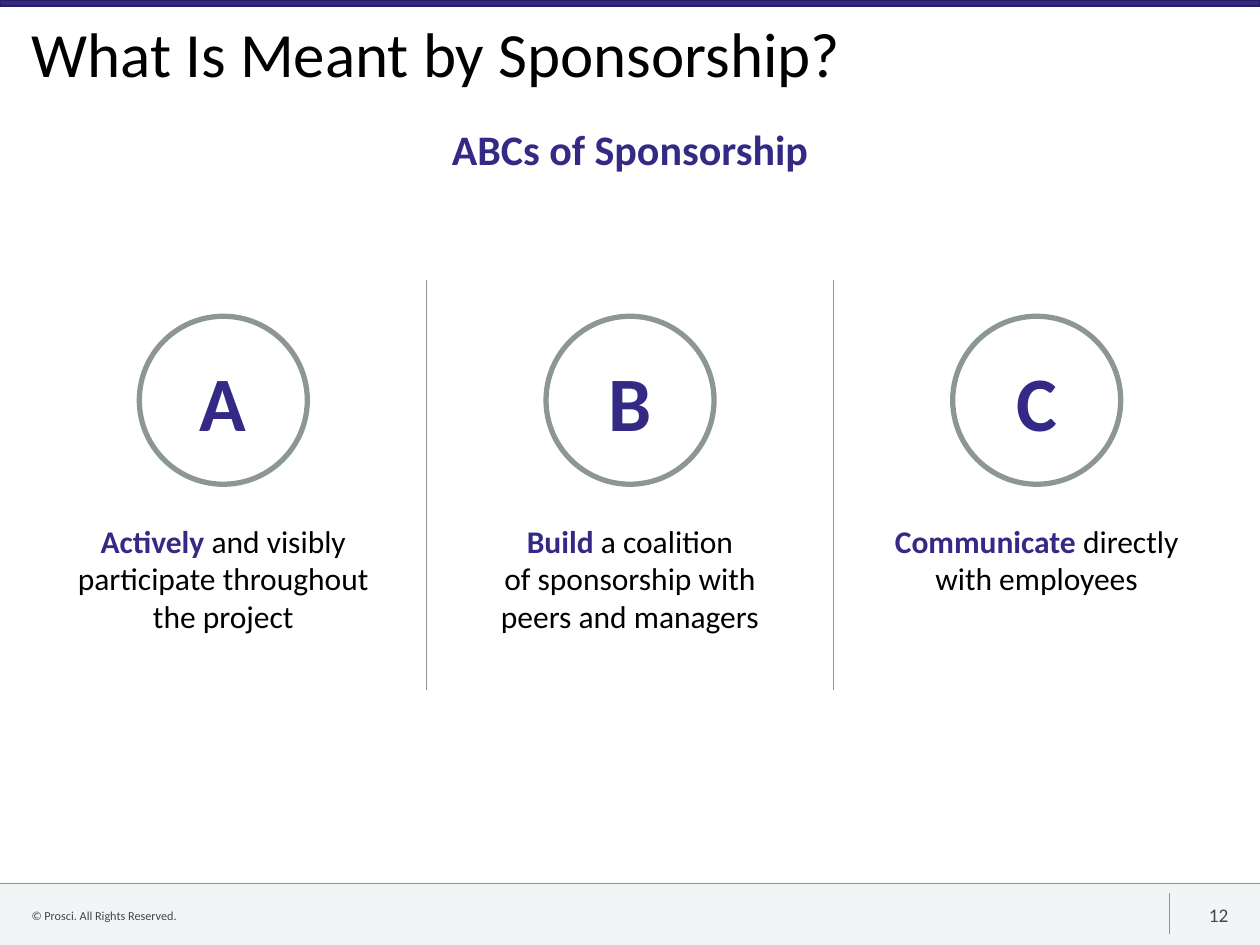
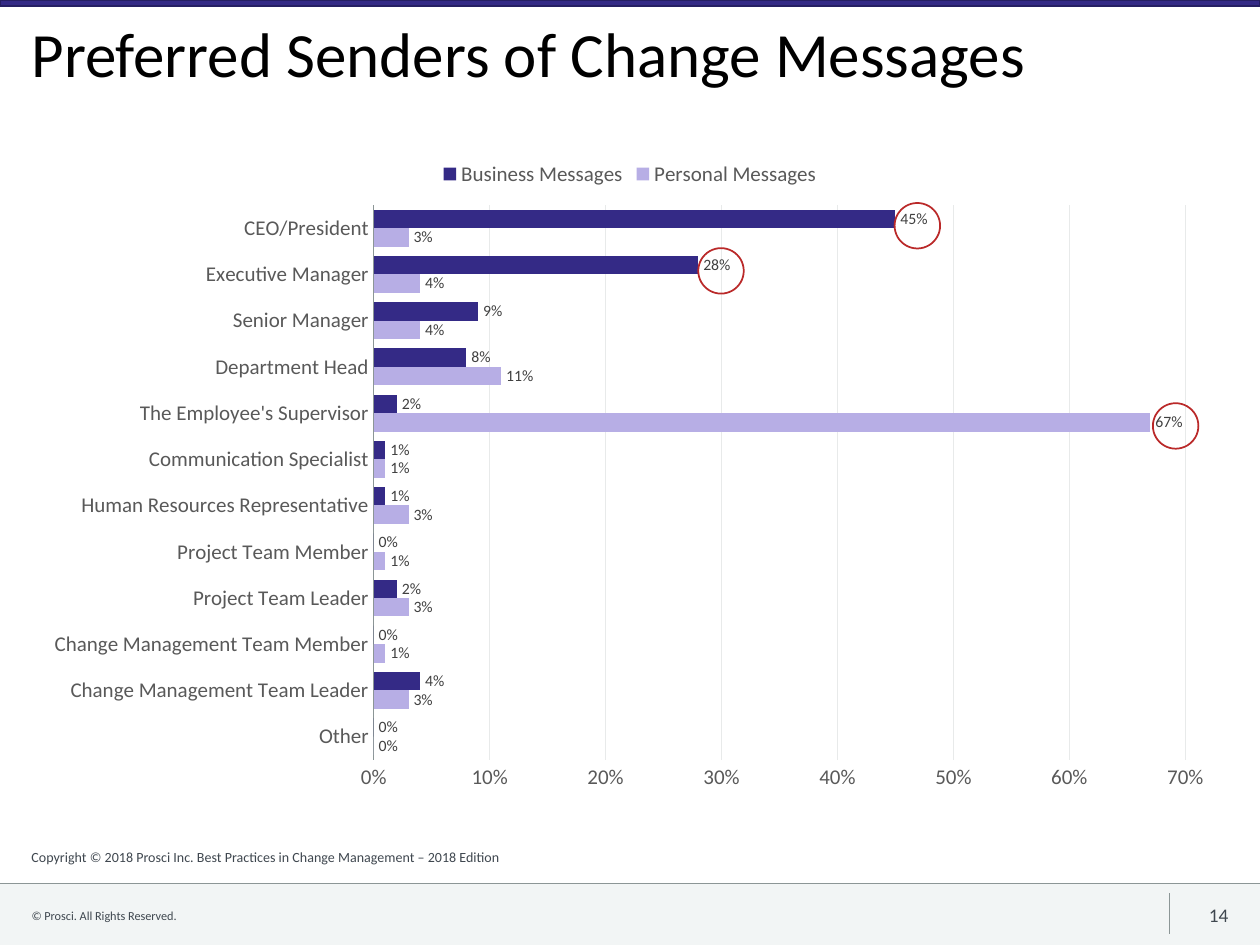
from lxml import etree
from pptx import Presentation
from pptx.chart.data import CategoryChartData
from pptx.dml.color import RGBColor
from pptx.enum.chart import XL_CHART_TYPE as CT, XL_LABEL_POSITION as LP
from pptx.enum.chart import XL_LEGEND_POSITION as LEG, XL_TICK_MARK as TICK
from pptx.enum.shapes import MSO_CONNECTOR as CONN, MSO_SHAPE as SHAPE
from pptx.enum.text import MSO_ANCHOR as ANCHOR, MSO_AUTO_SIZE as AUTO, PP_ALIGN as AL
from pptx.oxml import parse_xml
from pptx.oxml.ns import nsdecls, qn
from pptx.util import Pt

# Content
FOOTER = "© Prosci. All Rights Reserved."
ABC_TITLE = "What Is Meant by Sponsorship?"
ABC_HEADING = "ABCs of Sponsorship"
ABCS = [  # letter, bold lead, rest of the text by line
    ("A", "Actively", [" and visibly", "participate throughout", "the project"]),
    ("B", "Build ", ["a coalition", "of sponsorship with", "peers and managers"]),
    ("C", "Communicate", [" directly", "with employees"]),
]
SENDERS_TITLE = "Preferred Senders of Change Messages"
SOURCE = "Copyright © 2018 Prosci Inc. Best Practices in Change Management – 2018 Edition"
SENDERS = [  # sender, personal messages, business messages; bottom bar first
    ("Other", 0, 0),
    ("Change Management Team Leader", 0.03, 0.04),
    ("Change Management Team Member", 0.01, 0),
    ("Project Team Leader", 0.03, 0.02),
    ("Project Team Member", 0.01, 0),
    ("Human Resources Representative", 0.03, 0.01),
    ("Communication Specialist", 0.01, 0.01),
    ("The Employee's Supervisor", 0.67, 0.02),
    ("Department Head", 0.11, 0.08),
    ("Senior Manager", 0.04, 0.09),
    ("Executive Manager", 0.04, 0.28),
    ("CEO/President", 0.03, 0.45),
]
HIGHLIGHTS = [(511.2, 116), (658.8, 230.4), (399, 141.8)]

# Style
FONT = "Calibri"
INDIGO = RGBColor(0x34, 0x2A, 0x86)
INDIGO_DARK = RGBColor(0x26, 0x1F, 0x63)
LILAC = RGBColor(0xB7, 0xAE, 0xE5)
GRAY = RGBColor(0x8C, 0x96, 0x96)
GRID = RGBColor(0xE8, 0xEA, 0xEA)
PALE = RGBColor(0xF2, 0xF5, 0xF5)
SLATE = RGBColor(0x3F, 0x47, 0x4F)
AXIS_TEXT = RGBColor(0x59, 0x59, 0x59)
LABEL_TEXT = RGBColor(0x40, 0x40, 0x40)
RED = RGBColor(0xBA, 0x29, 0x29)
BLACK = RGBColor(0, 0, 0)
W, H, MARGIN = 720, 540, 18
BODY_W = W - 2 * MARGIN


def set_font(font, size, color, bold=False):
    font.name, font.size, font.bold = FONT, Pt(size), bold
    font.color.rgb = color


def set_frame(tf, insets, anchor=ANCHOR.TOP, wrap=True):
    tf.word_wrap, tf.auto_size, tf.vertical_anchor = wrap, AUTO.NONE, anchor
    tf.margin_left, tf.margin_top, tf.margin_right, tf.margin_bottom = map(Pt, insets)


def add_text(s, box, text, size, color, insets=(0, 0, 0, 0), anchor=ANCHOR.TOP,
             align=AL.LEFT, bold=False, wrap=True):
    tf = s.shapes.add_textbox(*map(Pt, box)).text_frame
    set_frame(tf, insets, anchor, wrap)
    p = tf.paragraphs[0]
    p.alignment = align
    r = p.add_run()
    r.text = text
    set_font(r.font, size, color, bold)
    return p


def add_shape(s, kind, box, fill=None, line=None, width=1):
    sp = s.shapes.add_shape(kind, *map(Pt, box))
    sp.shadow.inherit = False
    if fill is None:
        sp.fill.background()
    else:
        sp.fill.solid()
        sp.fill.fore_color.rgb = fill
    if line is None:
        sp.line.fill.background()
    else:
        sp.line.color.rgb, sp.line.width = line, Pt(width)
    return sp


def add_rule(s, x1, y1, x2, y2):
    cx = s.shapes.add_connector(CONN.STRAIGHT, Pt(x1), Pt(y1), Pt(x2), Pt(y2))
    cx.line.color.rgb, cx.line.width = GRAY, Pt(0.5)
    etree.SubElement(cx._element.spPr, qn("a:effectLst"))


def add_slide(prs, title, number):
    """Title, top band and footer shared by all slides."""
    s = prs.slides.add_slide(prs.slide_layouts[5])
    footer_y = 504.7
    add_shape(s, SHAPE.RECTANGLE, (0, footer_y, W, H - footer_y), PALE)
    add_shape(s, SHAPE.RECTANGLE, (0, 0, W, 3.6), INDIGO, INDIGO_DARK)
    add_rule(s, 0, footer_y, W, footer_y)
    add_rule(s, 668, 510.5, 668, 534)
    add_text(s, (MARGIN, 515, 528, 16), FOOTER, 7, SLATE, (0, 3.6, 7.2, 3.6), ANCHOR.MIDDLE)
    add_text(s, (667, 515.5, 35, 15), str(number), 11, SLATE,
             anchor=ANCHOR.MIDDLE, align=AL.RIGHT)

    t = s.shapes.title
    t.left, t.top, t.width, t.height = map(Pt, (MARGIN, 9.4, BODY_W, 65))
    set_frame(t.text_frame, (0, 3.6, 0, 3.6))
    t.text_frame.text = title
    p = t.text_frame.paragraphs[0]
    p.alignment, p.line_spacing = AL.LEFT, 0.9
    set_font(p.runs[0].font, 36, BLACK)
    return s


def build_abcs(prs):
    s = add_slide(prs, ABC_TITLE, 12)
    add_text(s, (MARGIN, 70.5, BODY_W, 29), ABC_HEADING, 24, INDIGO, (7.2, 0, 7.2, 0),
             align=AL.CENTER, bold=True)

    pitch, col_w, ring = 232.4, 218.6, 96
    for i, (letter, lead, lines) in enumerate(ABCS):
        mid = W / 2 + (i - 1) * pitch
        if i:
            add_rule(s, mid - pitch / 2, 394.5, mid - pitch / 2, 160)

        # Letter in a ring
        sp = add_shape(s, SHAPE.OVAL, (mid - ring / 2, 180.7, ring, ring), line=GRAY, width=3)
        sp.text_frame.text = letter
        sp.text_frame.vertical_anchor = ANCHOR.MIDDLE
        p = sp.text_frame.paragraphs[0]
        p.alignment = AL.CENTER
        set_font(p.runs[0].font, 44, INDIGO, True)

        # Statement below the ring
        p = add_text(s, (mid - col_w / 2, 294.5, col_w, 36), lead, 18, INDIGO,
                     (7.2, 3.6, 7.2, 3.6), align=AL.CENTER, bold=True, wrap=False)
        for n, line in enumerate(lines):
            if n:
                p.add_line_break()
            r = p.add_run()
            r.text = line
            set_font(r.font, 18, BLACK)


def build_senders(prs):
    s = add_slide(prs, SENDERS_TITLE, 14)
    p = add_text(s, (MARGIN, 459.4, BODY_W, 35.3), SOURCE, 8, SLATE, anchor=ANCHOR.BOTTOM)
    p.line_spacing = 0.85

    names, personal, business = zip(*SENDERS)
    data = CategoryChartData(number_format="0%")
    data.categories = names
    data.add_series("Personal Messages", personal)
    data.add_series("Business Messages", business)
    chart = s.shapes.add_chart(CT.BAR_CLUSTERED, Pt(MARGIN), Pt(84.2), Pt(BODY_W),
                               Pt(375.2), data).chart
    chart.has_title = False
    set_font(chart.font, 10, BLACK)
    chart.has_legend = True
    chart.legend.position = LEG.TOP
    chart.legend.include_in_layout = False
    set_font(chart.legend.font, 12, AXIS_TEXT)

    # Bars and their labels
    plot = chart.plots[0]
    plot.gap_width, plot.overlap, plot.vary_by_categories = 50, 0, False
    for series, color in zip(plot.series, (LILAC, INDIGO)):
        series.format.fill.solid()
        series.format.fill.fore_color.rgb = color
        labels = series.data_labels
        labels.show_value, labels.position = True, LP.OUTSIDE_END
        labels.number_format, labels.number_format_is_linked = "0%", False
        set_font(labels.font, 9, LABEL_TEXT)

    # Axes
    cat, val = chart.category_axis, chart.value_axis
    for axis in (cat, val):
        axis.major_tick_mark = axis.minor_tick_mark = TICK.NONE
        set_font(axis.tick_labels.font, 12, AXIS_TEXT)
    cat.format.line.color.rgb, cat.format.line.width = GRAY, Pt(0.5)
    val.format.line.fill.background()
    val.minimum_scale, val.maximum_scale, val.major_unit = 0, 0.7, 0.1
    val.tick_labels.number_format, val.tick_labels.number_format_is_linked = "0%", False
    grid = val.major_gridlines.format.line
    grid.color.rgb, grid.width = GRID, Pt(0.75)

    # Fixed plot area, so the highlight rings meet their labels
    area = chart._chartSpace.chart.plotArea
    for old in area.findall(qn("c:layout")):
        area.remove(old)
    sizes = {"x": 0.286, "y": 0.088, "w": 0.678, "h": 0.845}
    modes = "".join(f'<c:{k}Mode val="edge"/>' for k in "xy")
    places = "".join(f'<c:{k} val="{v}"/>' for k, v in sizes.items())
    area.insert(0, parse_xml(
        f'<c:layout {nsdecls("c")}><c:manualLayout><c:layoutTarget val="inner"/>'
        f'{modes}{places}</c:manualLayout></c:layout>'))

    for x, y in HIGHLIGHTS:
        add_shape(s, SHAPE.OVAL, (x, y, 26, 26), line=RED)


def main():
    prs = Presentation()
    prs.slide_width, prs.slide_height = Pt(W), Pt(H)
    build_abcs(prs)
    build_senders(prs)
    prs.save("out.pptx")


if __name__ == "__main__":
    main()
